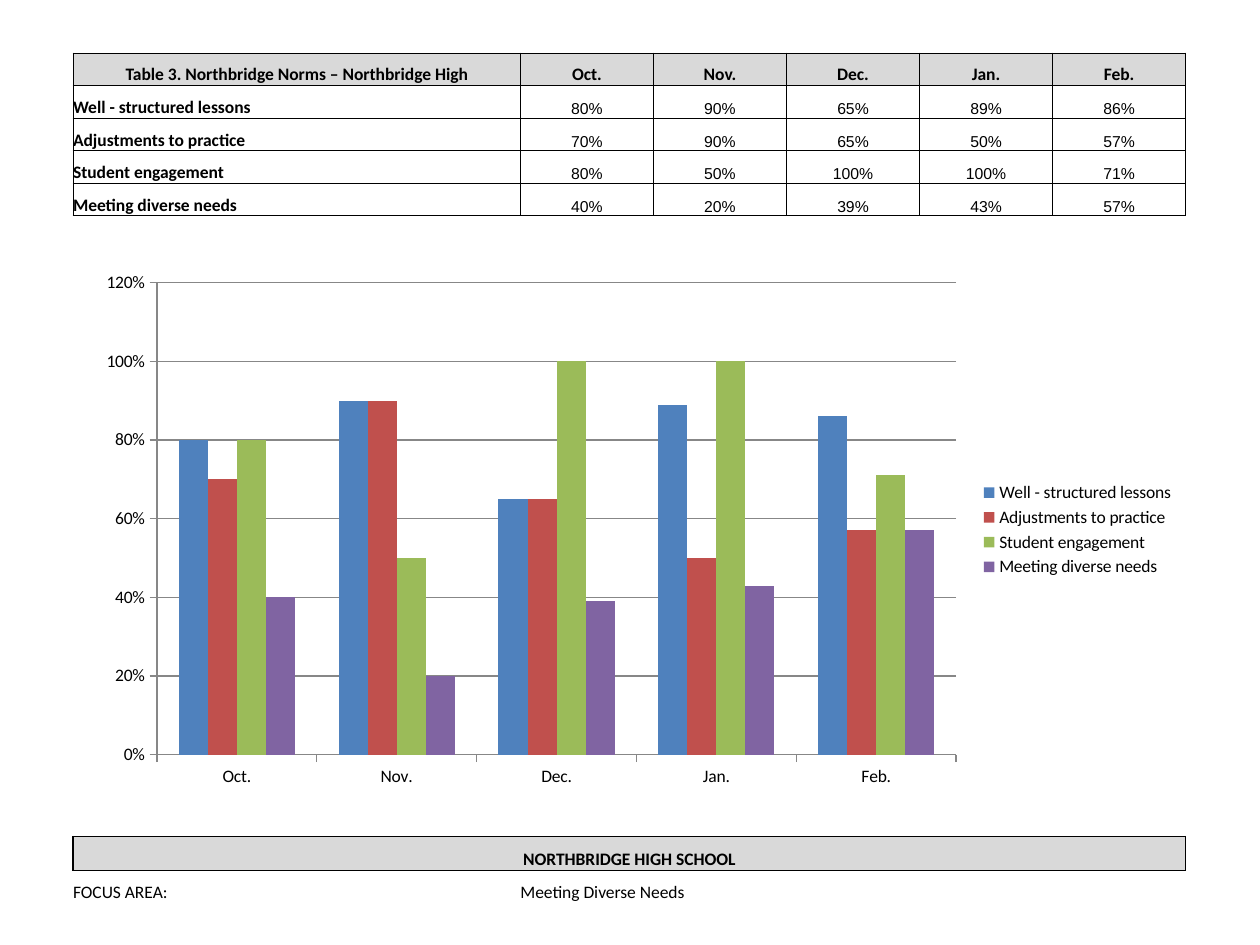
import dataclasses

import lxml.etree
import pptx
import pptx.chart.data
import pptx.dml.color
import pptx.enum.chart
import pptx.enum.text
import pptx.oxml.ns
import pptx.util

Inches = pptx.util.Inches
Pt = pptx.util.Pt
Align = pptx.enum.text.PP_ALIGN
qn = pptx.oxml.ns.qn


@dataclasses.dataclass(frozen=True)
class Theme:
    ink: str = "000000"
    band: str = "D9D9D9"
    axis: str = "878787"
    series: tuple = ("4F81BD", "C0504D", "9BBB59", "8064A2")
    label_font: str = "Calibri"
    value_font: str = "Arial"
    label_size: int = 10
    value_size: int = 9
    thin: float = 0.5
    thick: float = 1


THEME = Theme()
MONTHS = ("Oct.", "Nov.", "Dec.", "Jan.", "Feb.")
NORMS = {
    "Well - structured lessons": (80, 90, 65, 89, 86),
    "Adjustments to practice": (70, 90, 65, 50, 57),
    "Student engagement": (80, 50, 100, 100, 71),
    "Meeting diverse needs": (40, 20, 39, 43, 57),
}
NO_STYLE_NO_GRID = "{2D5ABB26-0587-4C30-8999-92F81FD0307C}"
ROW_COUNT = 26
SCHOOL_ROW, FOCUS_ROW = 24, 25


def rgb(color):
    return pptx.dml.color.RGBColor.from_string(color)


def write(cell, text, size=THEME.label_size, font=THEME.label_font,
          bold=False, align=Align.LEFT):
    cell.vertical_anchor = pptx.enum.text.MSO_ANCHOR.BOTTOM
    paragraph = cell.text_frame.paragraphs[0]
    paragraph.alignment = align
    run = paragraph.add_run()
    run.text = text
    run.font.size = Pt(size)
    run.font.name = font
    run.font.bold = bold
    run.font.color.rgb = rgb(THEME.ink)


def clear_cell(cell):
    """Remove the insets and keep an empty cell from stretching its row."""
    cell.margin_left = cell.margin_right = 0
    cell.margin_top = cell.margin_bottom = 0
    paragraph = cell.text_frame.paragraphs[0]
    lxml.etree.SubElement(paragraph._p, qn("a:endParaRPr"),
                          sz=str(THEME.label_size * 100))


def frame(cell, weight, fill=None):
    """Draw all four borders, then the fill, which must follow them."""
    properties = cell._tc.get_or_add_tcPr()
    for side in ("lnL", "lnR", "lnT", "lnB"):
        line = lxml.etree.SubElement(properties, qn("a:" + side),
                                     w=str(Pt(weight)))
        solid = lxml.etree.SubElement(line, qn("a:solidFill"))
        lxml.etree.SubElement(solid, qn("a:srgbClr"), val=THEME.ink)
    if fill:
        cell.fill.solid()
        cell.fill.fore_color.rgb = rgb(fill)


def add_norms_table(slide, left, top, width, height):
    """Norms grid at the top, school band at the foot, open rows between."""
    columns = len(MONTHS) + 1
    table = slide.shapes.add_table(ROW_COUNT, columns, left, top,
                                   width, height).table
    table.first_row = table.horz_banding = False
    table._tbl.tblPr.find(qn("a:tableStyleId")).text = NO_STYLE_NO_GRID

    label_width = Inches(3.55)
    table.columns[0].width = label_width
    for column in range(1, columns):
        table.columns[column].width = (width - label_width) // len(MONTHS)

    tall_rows = (SCHOOL_ROW - 1, SCHOOL_ROW)
    tall = Inches(0.27)
    plain = (height - len(tall_rows) * tall) // (ROW_COUNT - len(tall_rows))
    for index, row in enumerate(table.rows):
        row.height = tall if index in tall_rows else plain
        for cell in row.cells:
            clear_cell(cell)

    headings = ("Table 3. Northbridge Norms – Northbridge High",) + MONTHS
    for column, heading in enumerate(headings):
        cell = table.cell(0, column)
        write(cell, heading, bold=True, align=Align.CENTER)
        frame(cell, THEME.thin, THEME.band)

    for row, (norm, shares) in enumerate(NORMS.items(), start=1):
        write(table.cell(row, 0), norm, bold=True)
        for column, share in enumerate(shares, start=1):
            write(table.cell(row, column), f"{share}%", align=Align.CENTER,
                  size=THEME.value_size, font=THEME.value_font)
        for column in range(columns):
            frame(table.cell(row, column), THEME.thin)

    school = table.cell(SCHOOL_ROW, 0)
    school.merge(table.cell(SCHOOL_ROW, columns - 1))
    write(school, "NORTHBRIDGE HIGH SCHOOL", bold=True, align=Align.CENTER)
    for column in range(columns):
        frame(table.cell(SCHOOL_ROW, column), THEME.thick, THEME.band)

    focus = table.cell(FOCUS_ROW, 1)
    focus.merge(table.cell(FOCUS_ROW, 3))
    write(table.cell(FOCUS_ROW, 0), "FOCUS AREA:")
    write(focus, "Meeting Diverse Needs")


def add_norms_chart(slide, left, top, width, height):
    chart_data = pptx.chart.data.CategoryChartData(number_format="0%")
    chart_data.categories = MONTHS
    for norm, shares in NORMS.items():
        chart_data.add_series(norm, [share / 100 for share in shares])
    chart = slide.shapes.add_chart(
        pptx.enum.chart.XL_CHART_TYPE.COLUMN_CLUSTERED,
        left, top, width, height, chart_data).chart

    chart.has_title = False
    chart.font.name = THEME.label_font
    chart.font.size = Pt(THEME.label_size)
    chart.font.color.rgb = rgb(THEME.ink)
    chart.has_legend = True
    chart.legend.position = pptx.enum.chart.XL_LEGEND_POSITION.RIGHT
    chart.legend.include_in_layout = False

    plot = chart.plots[0]
    plot.gap_width = 150
    plot.overlap = 0
    plot.vary_by_categories = False
    for series, color in zip(plot.series, THEME.series):
        series.format.fill.solid()
        series.format.fill.fore_color.rgb = rgb(color)

    share_axis = chart.value_axis
    share_axis.minimum_scale = 0
    share_axis.maximum_scale = 1.2
    share_axis.major_unit = 0.2
    share_axis.has_major_gridlines = True
    share_axis.tick_labels.number_format = "0%"
    share_axis.tick_labels.number_format_is_linked = False
    for axis in (share_axis, chart.category_axis):
        axis.major_tick_mark = pptx.enum.chart.XL_TICK_MARK.OUTSIDE
    for ruled in (share_axis, chart.category_axis, share_axis.major_gridlines):
        ruled.format.line.color.rgb = rgb(THEME.axis)
        ruled.format.line.width = Pt(0.75)


def main():
    deck = pptx.Presentation()
    deck.slide_width = Inches(10)
    deck.slide_height = Inches(7.5)
    slide = deck.slides.add_slide(deck.slide_layouts[6])
    add_norms_table(slide, Inches(0.58), Inches(0.42),
                    Inches(8.83), Inches(6.75))
    add_norms_chart(slide, Inches(0.67), Inches(2.08),
                    Inches(8.75), Inches(4.25))
    deck.save("out.pptx")


if __name__ == "__main__":
    main()
